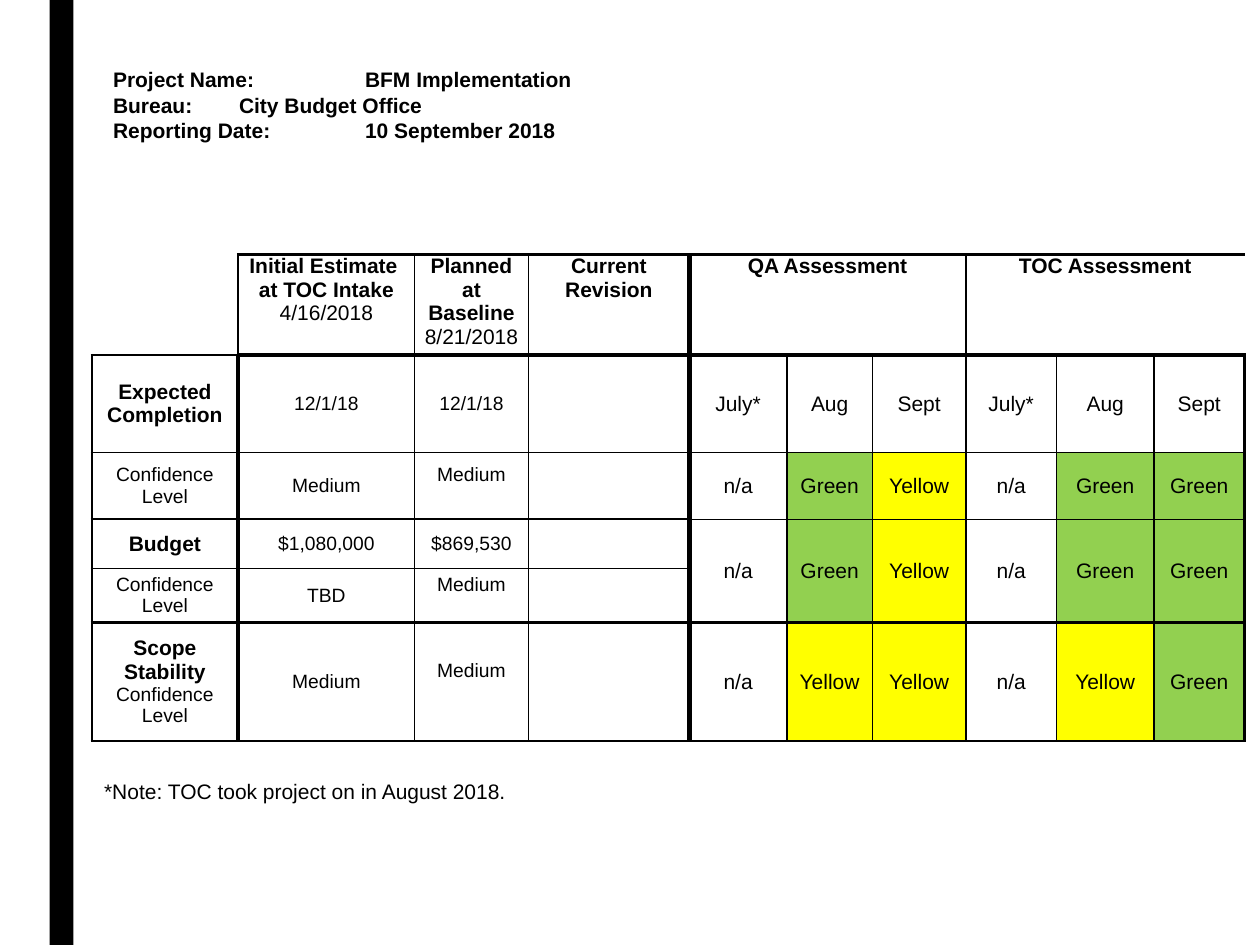
from dataclasses import dataclass

from lxml.etree import SubElement
from pptx import Presentation
from pptx.dml.color import RGBColor
from pptx.enum.shapes import MSO_SHAPE as Preset
from pptx.enum.text import MSO_ANCHOR as Anchor, PP_ALIGN as Align
from pptx.oxml.ns import qn
from pptx.util import Cm, Pt

COLORS = {"ink": "000000", "Green": "92D050", "Yellow": "FFFF00"}
HEADING = {"name": "Arial", "size": Pt(12), "bold": True}
BODY = {**HEADING, "bold": False}
SMALL = {**BODY, "size": Pt(11)}

COLUMN_WIDTHS = [2.95, 3.56, 2.29, 3.25, 1.96, 1.73, 1.88, 1.83, 1.96, 1.83]
ROW_HEIGHTS = [2.03, 1.96, 1.35, 0.99, 1.09, 2.39]
FIRST_STATUS = 4

# Rule widths in points, one for each edge of the grid
VERTICAL_RULES = [1.5, 2.25, 1, 1, 3.75, 1, 1, 1.5, 1, 1.5, 1.5]
HORIZONTAL_RULES = [1.5, 2.25, 1, 1.5, 1, 1.5, 1.5]


@dataclass
class Line:
    text: str
    format: dict
    new_paragraph: bool = False


@dataclass
class Entry:
    row: int
    column: int
    lines: list[Line]
    anchor: Anchor = Anchor.MIDDLE
    bottom: float = 0


@dataclass
class Note:
    left: float
    top: float
    width: float
    height: float
    lines: list[str]
    format: dict
    tabs: list[float]
    wrap: bool
    inset_top: float = 0.13


def color(name: str) -> RGBColor:
    return RGBColor.from_string(COLORS[name])


def apply_format(font, values: dict) -> None:
    for name, value in values.items():
        setattr(font, name, value)
    font.color.rgb = color("ink")


def draw_note(slide, note: Note) -> None:
    box = slide.shapes.add_textbox(Cm(note.left), Cm(note.top), Cm(note.width), Cm(note.height))
    frame = box.text_frame
    frame.word_wrap = note.wrap
    frame.margin_top = Cm(note.inset_top)
    for index, text in enumerate(note.lines):
        paragraph = frame.paragraphs[0] if index == 0 else frame.add_paragraph()
        if note.tabs:
            tab_list = SubElement(paragraph._p.get_or_add_pPr(), qn("a:tabLst"))
            for position in note.tabs:
                SubElement(tab_list, qn("a:tab"), pos=str(Cm(position)), algn="l")
        run = paragraph.add_run()
        run.text = text
        apply_format(run.font, note.format)


def vertical_rule(row: int, edge: int) -> float:
    if row == 0:
        if edge == 0 or edge in (5, 6, 8, 9):
            return 0
        if edge == 1:
            return 1.5
    return VERTICAL_RULES[edge]


def horizontal_rule(edge: int, column: int) -> float:
    if edge == 0 and column == 0:
        return 0
    if edge == 1 and column == 0:
        return 1.5
    if column >= FIRST_STATUS and edge in (3, 4):
        return 0 if edge == 4 else 1
    return HORIZONTAL_RULES[edge]


def draw_borders(cell, row: int, column: int) -> None:
    properties = cell._tc.get_or_add_tcPr()
    widths = {
        "a:lnL": vertical_rule(row, column),
        "a:lnR": vertical_rule(row, column + 1),
        "a:lnT": horizontal_rule(row, column),
        "a:lnB": horizontal_rule(row + 1, column),
    }
    for tag, width in widths.items():
        line = SubElement(properties, qn(tag), w=str(Pt(width)))
        if width:
            fill = SubElement(line, qn("a:solidFill"))
            SubElement(fill, qn("a:srgbClr"), val=COLORS["ink"])
        else:
            SubElement(line, qn("a:noFill"))


def draw_entry(table, entry: Entry) -> None:
    cell = table.cell(entry.row, entry.column)
    cell.vertical_anchor = entry.anchor
    cell.margin_bottom = Cm(entry.bottom)
    paragraph = cell.text_frame.paragraphs[0]
    for index, line in enumerate(entry.lines):
        if line.new_paragraph:
            paragraph = cell.text_frame.add_paragraph()
        elif index:
            paragraph.add_line_break()
        paragraph.alignment = Align.CENTER
        run = paragraph.add_run()
        run.text = line.text
        apply_format(run.font, line.format)
    if entry.lines[0].text in COLORS:
        cell.fill.solid()
        cell.fill.fore_color.rgb = color(entry.lines[0].text)


def draw_table(slide, entries: list[Entry]) -> None:
    table = slide.shapes.add_table(
        len(ROW_HEIGHTS), len(COLUMN_WIDTHS), Cm(1.85), Cm(5.13),
        Cm(sum(COLUMN_WIDTHS)), Cm(sum(ROW_HEIGHTS))).table
    table.first_row = table.horz_banding = False
    for column, width in zip(table.columns, COLUMN_WIDTHS):
        column.width = Cm(width)
    for row, height in zip(table.rows, ROW_HEIGHTS):
        row.height = Cm(height)
    for row in range(len(ROW_HEIGHTS)):
        for column in range(len(COLUMN_WIDTHS)):
            cell = table.cell(row, column)
            draw_borders(cell, row, column)
            cell.fill.background()
            cell.margin_left = cell.margin_right = Cm(0.18)
            cell.margin_top = cell.margin_bottom = 0
            cell.text_frame.paragraphs[0].font.size = Pt(11)
    # Assessment headings span three months; budget ratings span two rows
    for column in (4, 7):
        table.cell(0, column).merge(table.cell(0, column + 2))
    for column in range(FIRST_STATUS, len(COLUMN_WIDTHS)):
        table.cell(3, column).merge(table.cell(4, column))
    for entry in entries:
        draw_entry(table, entry)


def table_entries() -> list[Entry]:
    headings = {
        1: [Line("Initial Estimate ", HEADING), Line("at TOC Intake", HEADING), Line("4/16/2018", BODY)],
        2: [Line("Planned at Baseline", HEADING), Line("8/21/2018", BODY)],
        3: [Line("Current Revision", HEADING)],
        4: [Line("QA Assessment", HEADING)],
        7: [Line("TOC Assessment", HEADING)],
    }
    entries = [Entry(0, column, lines, Anchor.TOP) for column, lines in headings.items()]

    confidence = Line("Confidence Level", SMALL)
    labels = [
        [Line("Expected Completion", HEADING)],
        [confidence],
        [Line("Budget", HEADING)],
        [confidence],
        [Line("Scope Stability", HEADING), Line("Confidence Level", SMALL, True)],
    ]
    estimates = [("12/1/18", "12/1/18"), ("Medium", "Medium"), ("$1,080,000", "$869,530"),
                 ("TBD", "Medium"), ("Medium", "Medium")]
    for row, (label, (initial, planned)) in enumerate(zip(labels, estimates), 1):
        raised = 0.45 if planned == "Medium" else 0
        entries += [Entry(row, 0, label), Entry(row, 1, [Line(initial, SMALL)]),
                    Entry(row, 2, [Line(planned, SMALL)], bottom=raised)]

    ratings = {
        1: ["July*", "Aug", "Sept"] * 2,
        2: ["n/a", "Green", "Yellow", "n/a", "Green", "Green"],
        3: ["n/a", "Green", "Yellow", "n/a", "Green", "Green"],
        5: ["n/a", "Yellow", "Yellow", "n/a", "Yellow", "Green"],
    }
    for row, texts in ratings.items():
        entries += [Entry(row, column, [Line(text, BODY)])
                    for column, text in enumerate(texts, FIRST_STATUS)]
    return entries


def main() -> None:
    presentation = Presentation()
    presentation.slide_width, presentation.slide_height = Cm(25.4), Cm(19.05)
    slide = presentation.slides.add_slide(presentation.slide_layouts[6])

    # Black side bar
    bar = slide.shapes.add_shape(Preset.RECTANGLE, Cm(1), 0, Cm(0.48), Cm(19.05))
    bar.shadow.inherit = False
    bar.fill.solid()
    bar.fill.fore_color.rgb = color("ink")
    bar.line.fill.background()

    # Status table, project details and footnote
    draw_table(slide, table_entries())
    details = ["Project Name:\tBFM Implementation", "Bureau:\tCity Budget Office",
               "Reporting Date:\t10 September 2018"]
    draw_note(slide, Note(2.03, 1.17, 21.95, 2.31, details, HEADING, [2.54, 5.08], True, 0.18))
    draw_note(slide, Note(1.85, 15.57, 8.69, 0.76, ["*Note: TOC took project on in August 2018."],
                          BODY, [], False))
    presentation.save("out.pptx")


if __name__ == "__main__":
    main()
